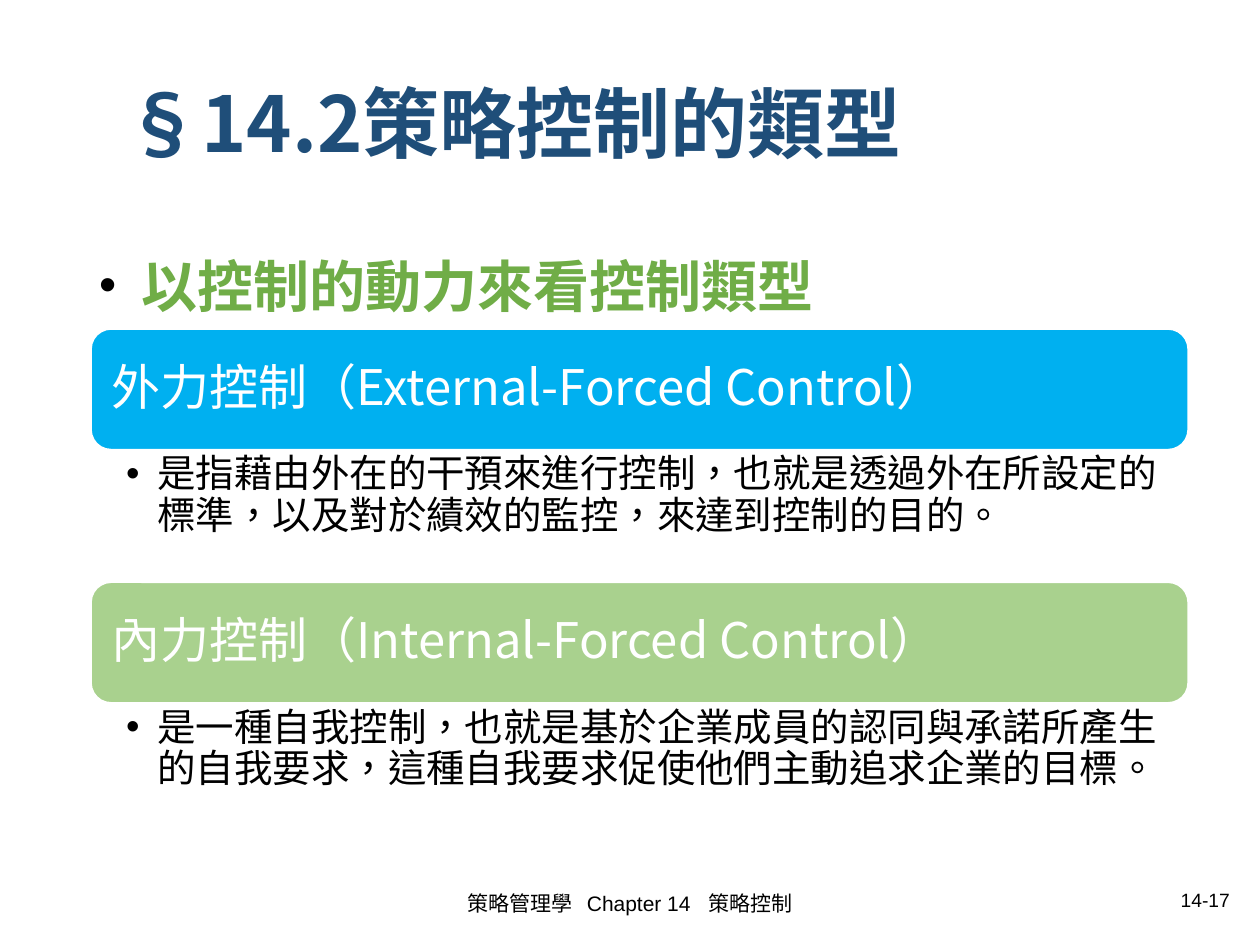
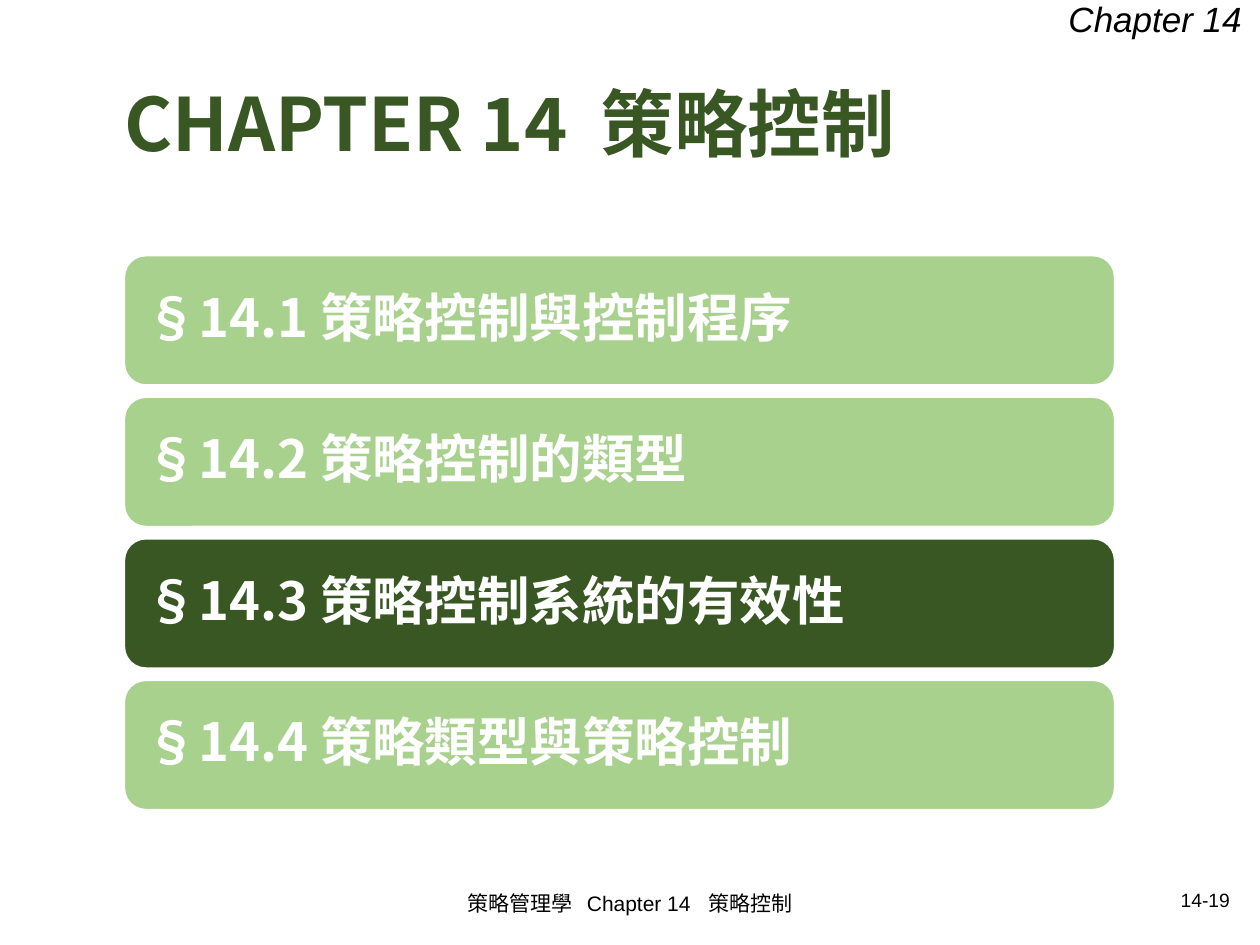
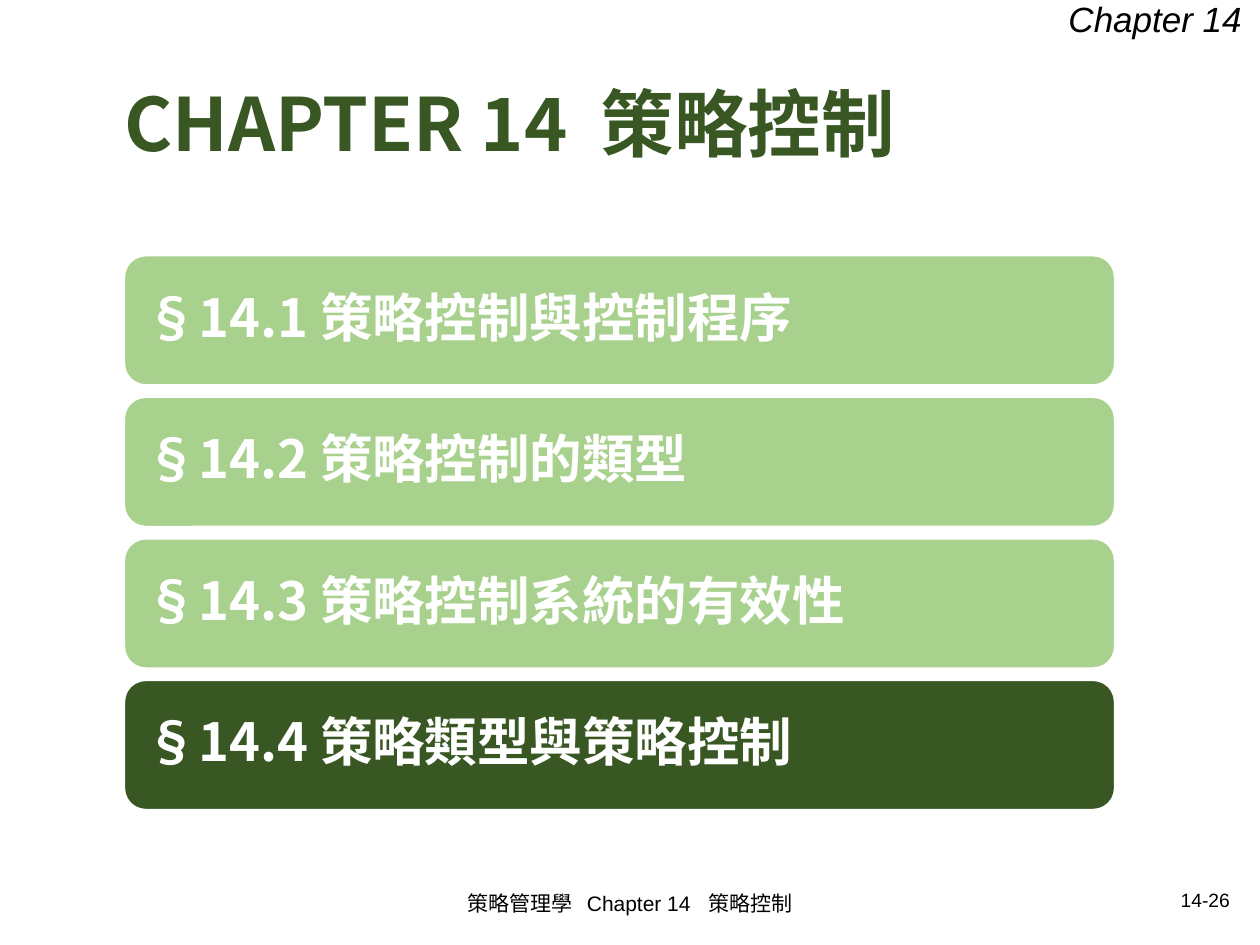
from dataclasses import dataclass

from pptx import Presentation
from pptx.dml.color import RGBColor
from pptx.enum.shapes import MSO_SHAPE as Shape
from pptx.enum.text import MSO_ANCHOR as Anchor, MSO_AUTO_SIZE as AutoSize, PP_ALIGN as Align
from pptx.oxml.xmlchemy import OxmlElement
from pptx.util import Pt


# Theme
@dataclass(frozen=True)
class Theme:
    latin: str = "Arial"
    cjk: str = "Noto Sans CJK SC"
    black: str = "000000"
    white: str = "FFFFFF"
    navy: str = "1F4E79"
    green: str = "70AD47"
    sky: str = "00B0F0"
    pale: str = "A9D18E"
    dark: str = "385723"
    section_size: int = 44
    chapter_size: int = 42
    lead_size: int = 32
    lead_space_size: int = 28
    agenda_size: int = 30
    type_size: int = 28
    detail_size: int = 22
    tag_size: int = 20
    footer_size: int = 12
    page_size: int = 11
    line_spacing: float = 0.9


THEME = Theme()

# Content
FOOTER = "策略管理學   Chapter 14   策略控制"
CHAPTER_TAG = "Chapter 14"
CHAPTER_TITLE = "CHAPTER 14  策略控制"
SECTION_TITLE = "§14.2策略控制的類型"
SECTION_PAGE = "14-17"
LEAD = "以控制的動力來看控制類型"
CONTROL_TYPES = [
    ("外力控制（External-Forced Control）", THEME.sky,
     "是指藉由外在的干預來進行控制，也就是透過外在所設定的標準，以及對於績效的監控，來達到控制的目的。"),
    ("內力控制（Internal-Forced Control）", THEME.pale,
     "是一種自我控制，也就是基於企業成員的認同與承諾所產生的自我要求，這種自我要求促使他們主動追求企業的目標。"),
]
AGENDA = [
    "§14.1 策略控制與控制程序",
    "§14.2 策略控制的類型",
    "§14.3 策略控制系統的有效性",
    "§14.4 策略類型與策略控制",
]
AGENDA_PAGES = [("14-19", 2), ("14-26", 3)]  # page number, highlighted section

# Layout in points: left, top, width, height
TITLE_AREA = (63.8, 43.6, 598, 59)
LEAD_AREA = (49.4, 140, 613, 352)
FOOTER_AREA = (238.5, 501.5, 243, 29)
PAGE_AREA = (508, 503, 202, 22)
TAG_AREA = (603.5, -5, 116.5, 32)
TYPE_LEFT, TYPE_TOP, TYPE_WIDTH = 52, 188, 627
TYPE_BAR, TYPE_PITCH = 69, 144.7
AGENDA_LEFT, AGENDA_TOP, AGENDA_WIDTH = 71, 146, 566
AGENDA_BAR, AGENDA_PITCH = 74, 80.9


# Text helpers
def set_all(target, **values):
    for name, value in values.items():
        setattr(target, name, value)


def place(shape, area):
    set_all(shape, **dict(zip(("left", "top", "width", "height"), map(Pt, area))))


def frame(shape, anchor=Anchor.TOP, insets=(7.2, 3.6, 7.2, 3.6)):
    text = shape.text_frame
    set_all(text, word_wrap=True, auto_size=AutoSize.NONE, vertical_anchor=anchor)
    sides = ("margin_left", "margin_top", "margin_right", "margin_bottom")
    set_all(text, **dict(zip(sides, map(Pt, insets))))
    return text.paragraphs[0]


def write(para, text, size, color, font=THEME.cjk, **style):
    span = para.add_run()
    span.text = text
    set_all(span.font, size=Pt(size), name=font, **style)
    span.font.color.rgb = RGBColor.from_string(color)
    props = span.font._element
    props.set("lang", "zh-TW")
    east_asian = OxmlElement("a:ea")
    east_asian.set("typeface", THEME.cjk)
    props.append(east_asian)


def add_bullet(para, indent=18):
    props = para._p.get_or_add_pPr()
    props.set("marL", str(Pt(indent)))
    props.set("indent", str(-Pt(indent)))
    font = OxmlElement("a:buFont")
    font.set("typeface", THEME.latin)
    mark = OxmlElement("a:buChar")
    mark.set("char", "•")
    props.extend([font, mark])


# Shared parts
def add_label(page, area, text, size, align, anchor=Anchor.MIDDLE, **style):
    box = page.shapes.add_textbox(*map(Pt, area))
    para = frame(box, anchor)
    para.alignment = align
    write(para, text, size, THEME.black, THEME.latin, **style)


def add_page(deck, layout, title, size, color, number):
    page = deck.slides.add_slide(deck.slide_layouts[layout])
    heading = page.shapes.title
    place(heading, TITLE_AREA)
    para = frame(heading, Anchor.MIDDLE)
    set_all(para, alignment=Align.LEFT, line_spacing=THEME.line_spacing)
    write(para, title, size, color, bold=True)
    add_label(page, FOOTER_AREA, FOOTER, THEME.footer_size, Align.CENTER)
    add_label(page, PAGE_AREA, number, THEME.page_size, Align.RIGHT)
    return page


def add_bar(page, area, text, size, fill, bold):
    bar = page.shapes.add_shape(Shape.ROUNDED_RECTANGLE, *map(Pt, area))
    bar.shadow.inherit = False
    bar.fill.solid()
    bar.fill.fore_color.rgb = RGBColor.from_string(fill)
    bar.line.color.rgb = RGBColor.from_string(THEME.white)
    bar.line.width = Pt(1)
    para = frame(bar, Anchor.MIDDLE, (8.6, 8.6, 8.6, 8.6))
    set_all(para, alignment=Align.LEFT, line_spacing=THEME.line_spacing)
    write(para, text, size, THEME.white, bold=bold)


# Slides
def add_types_page(deck):
    page = add_page(deck, 1, SECTION_TITLE, THEME.section_size, THEME.navy, SECTION_PAGE)
    body = page.placeholders[1]
    place(body, LEAD_AREA)
    para = frame(body)
    add_bullet(para)
    para.space_before = Pt(0)
    write(para, " ", THEME.lead_space_size, THEME.black, bold=True)
    write(para, LEAD, THEME.lead_size, THEME.green, bold=True)

    for row, (name, fill, detail) in enumerate(CONTROL_TYPES):
        top = TYPE_TOP + row * TYPE_PITCH
        add_bar(page, (TYPE_LEFT, top, TYPE_WIDTH, TYPE_BAR), name, THEME.type_size, fill, False)
        area = (TYPE_LEFT, top + TYPE_BAR, TYPE_WIDTH, TYPE_PITCH - TYPE_BAR)
        box = page.shapes.add_textbox(*map(Pt, area))
        para = frame(box, insets=(20, 2.8, 15.6, 2.8))
        add_bullet(para)
        para.line_spacing = THEME.line_spacing
        write(para, detail, THEME.detail_size, THEME.black)


def add_agenda_page(deck, number, current):
    page = add_page(deck, 5, CHAPTER_TITLE, THEME.chapter_size, THEME.dark, number)
    add_label(page, TAG_AREA, CHAPTER_TAG, THEME.tag_size, Align.LEFT, Anchor.TOP, italic=True)
    for row, section in enumerate(AGENDA):
        area = (AGENDA_LEFT, AGENDA_TOP + row * AGENDA_PITCH, AGENDA_WIDTH, AGENDA_BAR)
        fill = THEME.dark if row == current else THEME.pale
        add_bar(page, area, section, THEME.agenda_size, fill, True)


def main():
    deck = Presentation()
    set_all(deck, slide_width=Pt(720), slide_height=Pt(540))
    add_types_page(deck)
    for number, current in AGENDA_PAGES:
        add_agenda_page(deck, number, current)
    deck.save("out.pptx")


if __name__ == "__main__":
    main()
